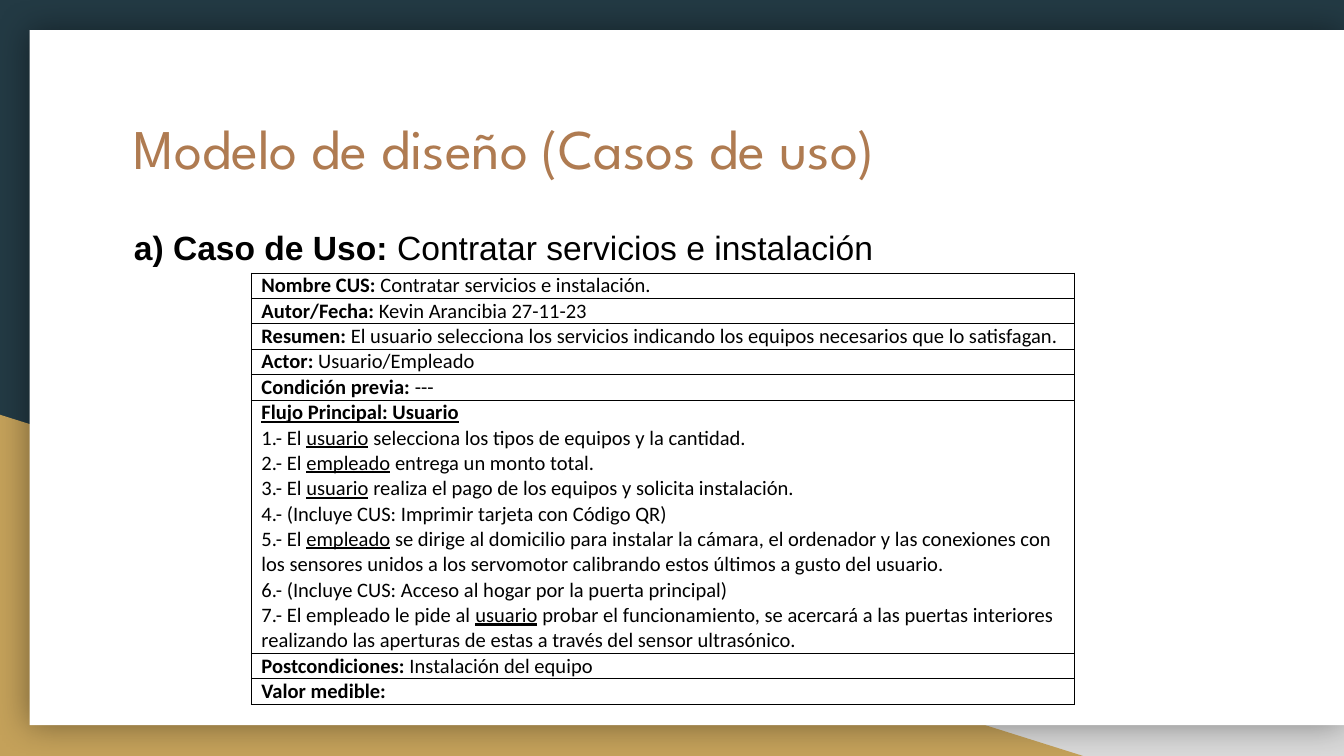
import pptx
import pptx.dml.color
import pptx.enum.shapes
import pptx.enum.text
import pptx.oxml
import pptx.oxml.ns
import pptx.util

Cm = pptx.util.Cm
Pt = pptx.util.Pt
RGBColor = pptx.dml.color.RGBColor
Shape = pptx.enum.shapes.MSO_SHAPE

NAVY = RGBColor(0x23, 0x3A, 0x44)
GRAY = RGBColor(0xD9, 0xD9, 0xD9)
GOLD = RGBColor(0xC4, 0xA1, 0x5A)
WHITE = RGBColor(0xFF, 0xFF, 0xFF)
BROWN = RGBColor(0xAF, 0x7B, 0x51)
BLACK = RGBColor(0, 0, 0)

HEADING = [("Modelo de diseño (Casos de uso)", "")]
USE_CASE = [("a) Caso de Uso:", "b"), (" Contratar servicios e instalación", "")]

MAIN_FLOW = [
    [("Flujo Principal: Usuario", "bu")],
    [("1.- El ", ""), ("usuario", "u"), (" selecciona los tipos de equipos y la cantidad.", "")],
    [("2.- El ", ""), ("empleado", "u"), (" entrega un monto total.", "")],
    [("3.- El ", ""), ("usuario", "u"), (" realiza el pago de los equipos y solicita instalación.", "")],
    [("4.- (Incluye CUS: Imprimir tarjeta con Código QR)", "")],
    [("5.- El ", ""), ("empleado", "u"),
     (" se dirige al domicilio para instalar la cámara, el ordenador y las conexiones con "
      "los sensores unidos a los servomotor calibrando estos últimos a gusto del usuario.", "")],
    [("6.- (Incluye CUS: Acceso al hogar por la puerta principal)", "")],
    [("7.- El empleado le pide al ", ""), ("usuario", "u"),
     (" probar el funcionamiento, se acercará a las puertas interiores "
      "realizando las aperturas de estas a través del sensor ultrasónico.", "")],
]
CASE_ROWS = [
    [[("Nombre CUS:", "b"), (" Contratar servicios e instalación.", "")]],
    [[("Autor/Fecha:", "b"), (" Kevin Arancibia 27-11-23", "")]],
    [[("Resumen:", "b"),
      (" El usuario selecciona los servicios indicando los equipos necesarios que lo satisfagan.", "")]],
    [[("Actor:", "b"), (" Usuario/Empleado", "")]],
    [[("Condición previa:", "b"), (" ---", "")]],
    MAIN_FLOW,
    [[("Postcondiciones:", "b"), (" Instalación del equipo", "")]],
    [[("Valor medible:", "b")]],
]
COLUMN_WIDTHS = [7.24, 8.31]
LINE_HEIGHT = 0.48
FLOW_HEIGHT = 4.78

BACKDROP = [
    (Shape.RIGHT_TRIANGLE, (9.96, 4.32, 15.44, 9.97), GRAY),
    (Shape.RIGHT_TRIANGLE, (0, 7.84, 20.47, 6.45), GOLD),
    (Shape.RECTANGLE, (0.56, 0.57, 24.84, 13.14), WHITE),
]
CARD_SHADOW = (
    f'<a:effectLst {pptx.oxml.ns.nsdecls("a")}>'
    f'<a:outerShdw blurRad="{Pt(18)}" dist="0" dir="0" algn="ctr" rotWithShape="0">'
    '<a:srgbClr val="000000"><a:alpha val="40000"/></a:srgbClr>'
    '</a:outerShdw></a:effectLst>'
)


def write_runs(paragraph, runs, font_name, size, color):
    for text, style in runs:
        run = paragraph.add_run()
        run.text = text
        run.font.name = font_name
        run.font.size = Pt(size)
        run.font.color.rgb = color
        run.font.bold = "b" in style
        run.font.underline = "u" in style


def fill_placeholder(placeholder, box, runs, font_name, size, color, line_spacing):
    placeholder.left, placeholder.top, placeholder.width, placeholder.height = map(Cm, box)
    frame = placeholder.text_frame
    frame.auto_size = pptx.enum.text.MSO_AUTO_SIZE.NONE
    frame.vertical_anchor = pptx.enum.text.MSO_ANCHOR.TOP
    frame.margin_left = frame.margin_right = Cm(0.25)
    frame.margin_top = frame.margin_bottom = Cm(0.25)
    paragraph = frame.paragraphs[0]
    paragraph.alignment = pptx.enum.text.PP_ALIGN.LEFT
    paragraph.line_spacing = line_spacing
    paragraph.space_before = Pt(0)
    properties = paragraph._p.get_or_add_pPr()
    properties.set("marL", "0")
    properties.set("indent", "0")
    properties.append(pptx.oxml.parse_xml(f'<a:buNone {pptx.oxml.ns.nsdecls("a")}/>'))
    write_runs(paragraph, runs, font_name, size, color)


def style_cell(cell):
    properties = cell._tc.get_or_add_tcPr()
    for side in ("lnL", "lnR", "lnT", "lnB"):
        properties.append(pptx.oxml.parse_xml(
            f'<a:{side} {pptx.oxml.ns.nsdecls("a")} w="{Pt(0.5)}">'
            f'<a:solidFill><a:srgbClr val="{BLACK}"/></a:solidFill></a:{side}>'))
    cell.fill.background()
    cell.margin_left = cell.margin_right = Cm(0.19)
    cell.margin_top = cell.margin_bottom = 0


deck = pptx.Presentation()
deck.slide_width, deck.slide_height = Cm(25.4), Cm(14.29)
slide = deck.slides.add_slide(deck.slide_layouts[1])
slide.background.fill.solid()
slide.background.fill.fore_color.rgb = NAVY

backdrop_shapes = []
for position, (kind, box, color) in enumerate(BACKDROP):
    backdrop = slide.shapes.add_shape(kind, *map(Cm, box))
    backdrop.shadow.inherit = False
    backdrop.fill.solid()
    backdrop.fill.fore_color.rgb = color
    backdrop.line.fill.background()
    slide.shapes._spTree.insert(2 + position, backdrop._element)
    backdrop_shapes.append(backdrop)

gray_corner, gold_corner, card = backdrop_shapes
gray_corner._element.spPr.xfrm.set("flipH", "1")
card_properties = card._element.spPr
card_properties.remove(card_properties.find(pptx.oxml.ns.qn("a:effectLst")))
card_properties.append(pptx.oxml.parse_xml(CARD_SHADOW))

fill_placeholder(slide.shapes.title, (2.28, 1.9, 20.85, 2.64), HEADING,
                 "League Spartan", 30, BROWN, 1.0)
fill_placeholder(slide.placeholders[1], (2.28, 3.92, 20.85, 6.81), USE_CASE,
                 "Arial", 18, BLACK, 1.15)

row_heights = [FLOW_HEIGHT if row is MAIN_FLOW else LINE_HEIGHT for row in CASE_ROWS]
case_table = slide.shapes.add_table(
    len(CASE_ROWS), len(COLUMN_WIDTHS), Cm(4.75), Cm(5.16),
    Cm(sum(COLUMN_WIDTHS)), Cm(sum(row_heights))).table
case_table.first_row = False
case_table.horz_banding = False
for column, width in zip(case_table.columns, COLUMN_WIDTHS):
    column.width = Cm(width)

for row_index, (paragraphs, height) in enumerate(zip(CASE_ROWS, row_heights)):
    case_table.rows[row_index].height = Cm(height)
    left_cell, right_cell = case_table.cell(row_index, 0), case_table.cell(row_index, 1)
    left_cell.merge(right_cell)
    style_cell(left_cell)
    style_cell(right_cell)
    frame = left_cell.text_frame
    for index, runs in enumerate(paragraphs):
        paragraph = frame.add_paragraph() if index else frame.paragraphs[0]
        write_runs(paragraph, runs, "Calibri", 11, BLACK)

deck.save("out.pptx")
